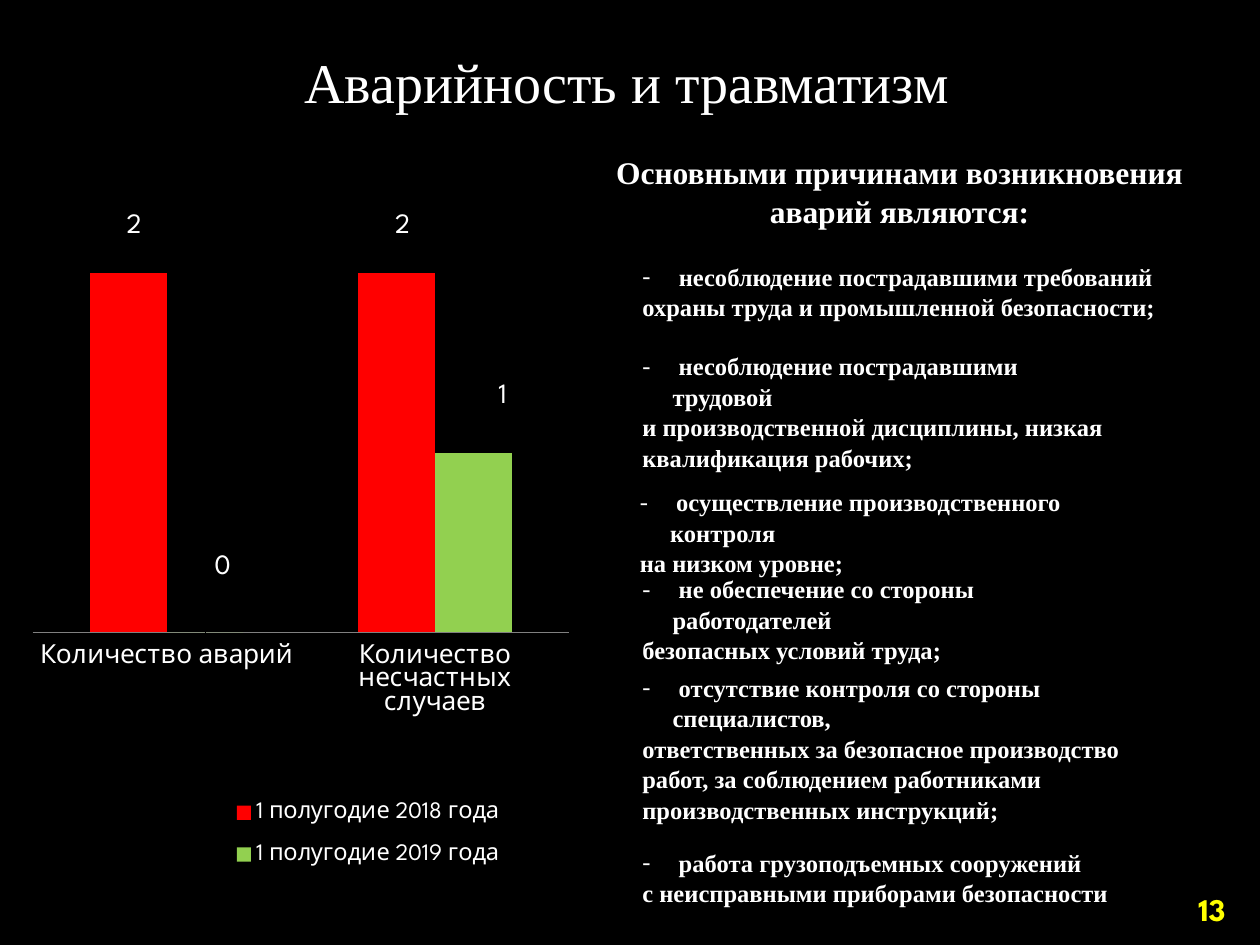
from dataclasses import dataclass
from lxml import etree
from pptx import Presentation
from pptx.chart.data import CategoryChartData as Data
from pptx.dml.color import RGBColor as Rgb
from pptx.enum.chart import XL_CHART_TYPE as Kind
from pptx.enum.chart import XL_LABEL_POSITION as Spot
from pptx.enum.chart import XL_LEGEND_POSITION as Side
from pptx.enum.chart import XL_TICK_LABEL_POSITION as Tick
from pptx.enum.chart import XL_TICK_MARK as Mark
from pptx.enum.shapes import MSO_SHAPE as Form
from pptx.enum.text import MSO_ANCHOR as Anchor
from pptx.enum.text import PP_ALIGN as Align
from pptx.oxml.ns import qn
from pptx.util import Inches, Pt


@dataclass(frozen=True)
class Theme:
    serif: str = "Times New Roman"
    sans: str = "League Spartan"
    back: str = "000000"
    ink: str = "FFFFFF"
    axis: str = "808080"
    mark: str = "FFFF00"
    bars: tuple = ("FF0000", "92D050")
    title: float = 32
    head: float = 18
    body: float = 14
    label: float = 16
    cat: float = 15
    key: float = 13.5


def paint(font, size, color, face, bold=False):
    font.size = Pt(size)
    font.name = face
    font.bold = bold
    font.color.rgb = Rgb.from_string(color)


def place(node, spot, **vals):
    for old in node.findall(qn("c:layout")):
        node.remove(old)
    layout = etree.Element(qn("c:layout"))
    manual = etree.SubElement(layout, qn("c:manualLayout"))
    for name, val in vals.items():
        etree.SubElement(manual, qn("c:" + name)).set("val", str(val))
    node.insert(spot, layout)


class Deck:
    def __init__(self, theme):
        self.theme = theme
        self.prs = Presentation()
        self.prs.slide_width = Inches(10)
        self.prs.slide_height = Inches(7.5)
        self.slide = self.prs.slides.add_slide(self.prs.slide_layouts[6])
        fill = self.slide.background.fill
        fill.solid()
        fill.fore_color.rgb = Rgb.from_string(theme.back)

    def text(self, box, lines, size, bold=True, align=Align.LEFT):
        shape = self.slide.shapes.add_textbox(*map(Inches, box))
        frame = shape.text_frame
        frame.word_wrap = True
        frame.text = "\n".join(lines)
        for par in frame.paragraphs:
            par.alignment = align
            par.line_spacing = 1.04
            for run in par.runs:
                paint(run.font, size, self.theme.ink, self.theme.serif, bold)
        return frame

    def item(self, box, lines):
        frame = self.text(box, lines, self.theme.body)
        props = frame.paragraphs[0]._p.get_or_add_pPr()
        hang = Inches(0.24)
        props.set("marL", str(hang))
        props.set("indent", str(-hang))
        etree.SubElement(props, qn("a:buFont")).set("typeface", self.theme.serif)
        etree.SubElement(props, qn("a:buChar")).set("char", "-")

    def chart(self, box, cats, rows, shifts):
        look = self.theme
        data = Data(number_format="0")
        data.categories = cats
        for name, vals in rows:
            data.add_series(name, vals)
        chart = self.slide.shapes.add_chart(
            Kind.COLUMN_CLUSTERED, *map(Inches, box), data).chart
        chart.has_title = False
        paint(chart.font, look.key, look.ink, look.sans)

        axis = chart.category_axis
        axis.major_tick_mark = axis.minor_tick_mark = Mark.NONE
        axis.tick_label_position = Tick.LOW
        axis.format.line.color.rgb = Rgb.from_string(look.axis)
        paint(axis.tick_labels.font, look.cat, look.ink, look.sans)
        scale = chart.value_axis
        scale.minimum_scale, scale.maximum_scale = 0, 2.5
        scale.has_major_gridlines = False
        scale.visible = False

        plot = chart.plots[0]
        plot.gap_width = 150
        plot.overlap = 0
        plot.vary_by_categories = False
        for ser, color, moves in zip(plot.series, look.bars, shifts):
            ser.format.fill.solid()
            ser.format.fill.fore_color.rgb = Rgb.from_string(color)
            tags = ser.data_labels
            tags.show_value = True
            paint(tags.font, look.label, look.ink, look.sans)
            for num in range(len(moves)):
                tag = ser.points[num].data_label
                paint(tag.font, look.label, look.ink, look.sans)
                tag.position = Spot.OUTSIDE_END
            for node, (x, y) in zip(ser._element.iter(qn("c:dLbl")), moves):
                place(node, 1, x=x, y=y)

        chart.has_legend = True
        key = chart.legend
        key.position = Side.BOTTOM
        key.include_in_layout = False
        paint(key.font, look.key, look.ink, look.sans)
        place(key._element, 1, xMode="edge", yMode="edge",
              x=0.37, y=0.81, w=0.47, h=0.11)
        area = chart._chartSpace.find(".//" + qn("c:plotArea"))
        place(area, 0, layoutTarget="inner", xMode="edge", yMode="edge",
              x=0.03, y=0.17, w=0.92, h=0.48)

    def badge(self, box, word):
        shape = self.slide.shapes.add_shape(Form.OVAL, *map(Inches, box))
        shape.shadow.inherit = False
        shape.fill.background()
        shape.line.fill.background()
        frame = shape.text_frame
        frame.vertical_anchor = Anchor.MIDDLE
        frame.text = word
        par = frame.paragraphs[0]
        par.alignment = Align.CENTER
        look = self.theme
        paint(par.runs[0].font, look.head, look.mark, look.sans, True)


ITEMS = [
    ((5, 2.02, 4.31, 0.57),
     [" несоблюдение пострадавшими требований",
      "охраны труда и промышленной безопасности;"]),
    ((5, 2.73, 3.94, 0.81),
     [" несоблюдение пострадавшими трудовой",
      "и производственной дисциплины, низкая",
      "квалификация рабочих;"]),
    ((4.98, 3.81, 4.34, 0.57),
     [" осуществление производственного контроля",
      "на низком уровне;"]),
    ((5, 4.5, 4.06, 0.57),
     [" не обеспечение со стороны работодателей",
      "безопасных условий труда;"]),
    ((5, 5.28, 4.53, 1.04),
     [" отсутствие контроля со стороны специалистов,",
      "ответственных за безопасное производство",
      "работ, за соблюдением работниками",
      "производственных инструкций;"]),
    ((5, 6.67, 3.93, 0.57),
     [" работа грузоподъемных сооружений",
      "с неисправными приборами безопасности"]),
]


def main():
    theme = Theme()
    deck = Deck(theme)
    title = deck.text((-0.04, 0.31, 10.03, 0.64), ["Аварийность и травматизм"],
                      theme.title, False, Align.CENTER)
    title.vertical_anchor = Anchor.MIDDLE
    deck.chart((0.12, 0.19, 4.63, 7.43),
               ["Количество аварий", "Количество несчастных случаев"],
               [("1 полугодие 2018 года", (2, 2)),
                ("1 полугодие 2019 года", (0, 1))],
               [[(0.01, -0.03), (0.01, -0.03)],
                [(0.03, -0.05), (0.05, -0.04)]])
    head = deck.text((4.8, 1.15, 5.2, 2.52),
                     ["Основными причинами возникновения аварий являются:"],
                     theme.head, align=Align.CENTER)
    head.margin_left, head.margin_right = Inches(0.05), Inches(0.57)
    for box, lines in ITEMS:
        deck.item(box, lines)
    deck.badge((9.24, 6.94, 0.76, 0.55), "13")
    deck.prs.save("out.pptx")


if __name__ == "__main__":
    main()
